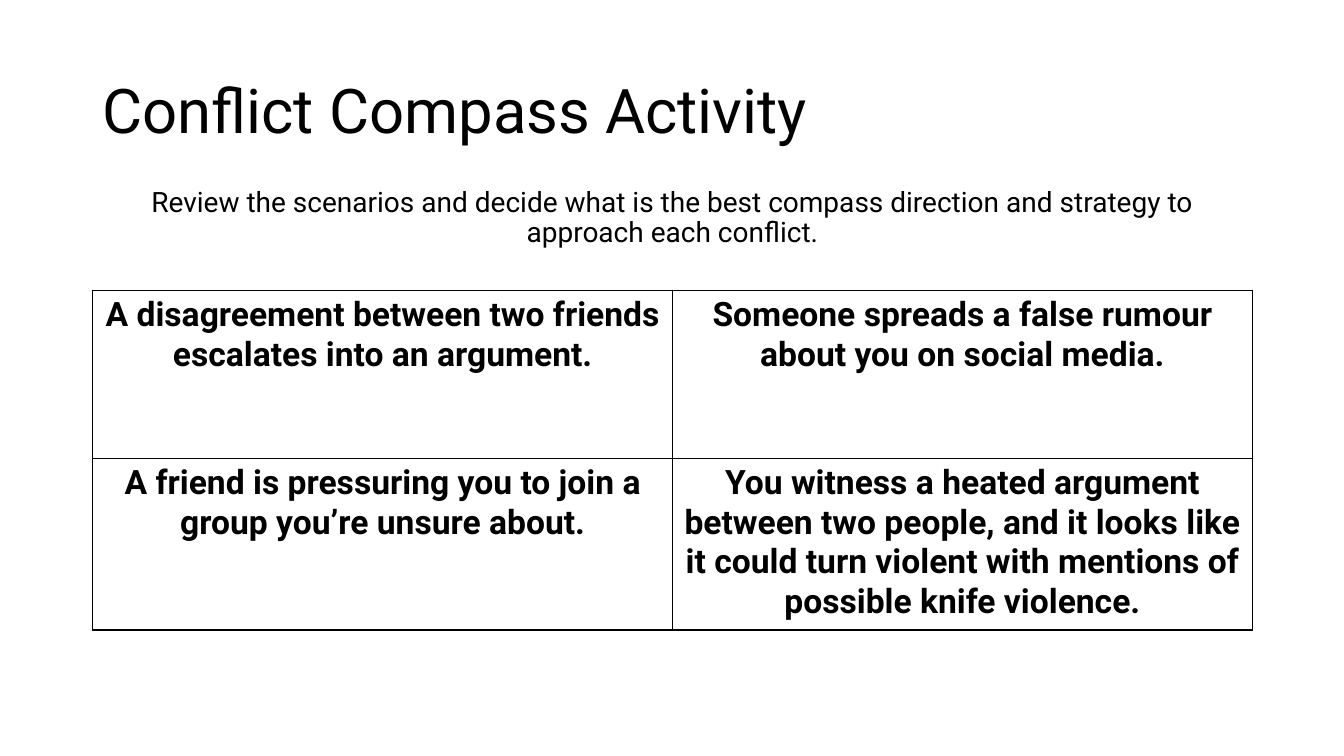
from pptx import Presentation
from pptx.dml.color import RGBColor
from pptx.enum.text import MSO_ANCHOR, PP_ALIGN
from pptx.oxml.ns import qn
from pptx.util import Inches, Pt
from lxml import etree

TITLE = "Conflict Compass Activity"
TASK = ("Review the scenarios and decide what is the best compass direction "
        "and strategy to approach each conflict.")
CASES = [
    ["A disagreement between two friends escalates into an argument.",
     "Someone spreads a false rumour about you on social media."],
    ["A friend is pressuring you to join a group you’re unsure about.",
     "You witness a heated argument between two people, and it looks like "
     "it could turn violent with mentions of possible knife violence."],
]

FONT = "Roboto"
BLACK = RGBColor(0, 0, 0)
LEFT, CENTER = PP_ALIGN.LEFT, PP_ALIGN.CENTER
TOP, MIDDLE = MSO_ANCHOR.TOP, MSO_ANCHOR.MIDDLE
EDGE, WIDTH = 0.92, 11.5
ROW = 1.67


def write(frame, text, size, align, space=1.0, bold=False):
    para = frame.paragraphs[0]
    para.alignment = align
    para.line_spacing = space
    run = para.add_run()
    run.text = text
    run.font.name = FONT
    run.font.size = Pt(size)
    run.font.bold = bold
    run.font.color.rgb = BLACK


def add_text(slide, top, height, text, size, align, anchor):
    box = slide.shapes.add_textbox(
        Inches(EDGE), Inches(top), Inches(WIDTH), Inches(height))
    frame = box.text_frame
    frame.word_wrap = True
    frame.vertical_anchor = anchor
    write(frame, text, size, align, 0.9)


def add_border(cell):
    props = cell._tc.get_or_add_tcPr()
    for side in ("a:lnL", "a:lnR", "a:lnT", "a:lnB"):
        line = etree.SubElement(props, qn(side), w=str(Pt(1)))
        fill = etree.SubElement(line, qn("a:solidFill"))
        etree.SubElement(fill, qn("a:srgbClr"), val=str(BLACK))


def add_cases(slide, top):
    rows, cols = len(CASES), len(CASES[0])
    table = slide.shapes.add_table(
        rows, cols, Inches(EDGE), Inches(top),
        Inches(WIDTH), Inches(ROW * rows)).table
    table.first_row = False
    table.horz_banding = False
    for col in table.columns:
        col.width = Inches(WIDTH / cols)
    for row, texts in zip(table.rows, CASES):
        row.height = Inches(ROW)
        for cell, text in zip(row.cells, texts):
            add_border(cell)
            cell.fill.background()
            write(cell.text_frame, text, 24, CENTER, bold=True)


def main():
    deck = Presentation()
    deck.slide_width = Inches(13.33)
    deck.slide_height = Inches(7.5)
    slide = deck.slides.add_slide(deck.slide_layouts[6])
    add_text(slide, 0.4, 1.45, TITLE, 44, LEFT, MIDDLE)
    add_text(slide, 1.82, 1.04, TASK, 20, CENTER, TOP)
    add_cases(slide, 2.88)
    deck.save("out.pptx")


if __name__ == "__main__":
    main()
